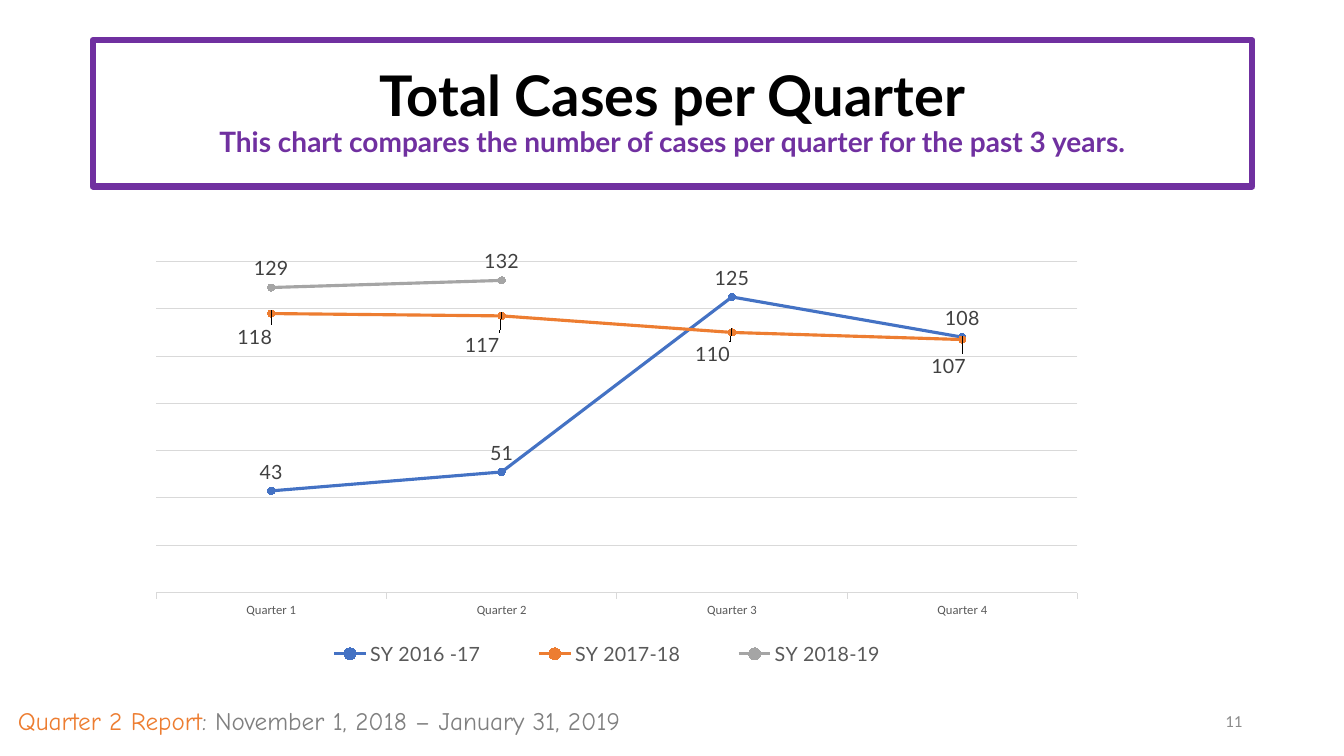
from lxml import etree
from pptx import Presentation
from pptx.chart.data import CategoryChartData
from pptx.dml.color import RGBColor
from pptx.enum.chart import XL_CHART_TYPE as ChartType
from pptx.enum.chart import XL_LABEL_POSITION as LabelPosition
from pptx.enum.chart import XL_LEGEND_POSITION as LegendPosition
from pptx.enum.chart import XL_MARKER_STYLE as MarkerStyle
from pptx.enum.chart import XL_TICK_LABEL_POSITION as TickLabels
from pptx.enum.chart import XL_TICK_MARK as TickMark
from pptx.enum.shapes import MSO_SHAPE as Preset
from pptx.enum.text import MSO_ANCHOR as Anchor
from pptx.enum.text import PP_ALIGN as Align
from pptx.oxml.ns import qn
from pptx.util import Pt

PX = 9144  # 100 px to the inch
PURPLE, ORANGE, GREY, GRID = "7030A0", "ED7D31", "595959", "D9D9D9"


def style(font, text=None, *, size, color, name="Lato", bold=False):
    """Format a font; given text, add it to the paragraph passed as font."""
    if text is not None:
        run = font.add_run()
        run.text = text
        font = run.font
    font.size, font.name, font.bold = Pt(size), name, bold
    font.color.rgb = RGBColor.from_string(color)


def set_layout(parent, position, **fractions):
    """Place a chart part by fractions of the chart area."""
    for old in parent.findall(qn("c:layout")):
        parent.remove(old)
    layout = etree.Element(qn("c:layout"))
    manual = etree.SubElement(layout, qn("c:manualLayout"))
    for key, value in fractions.items():
        etree.SubElement(manual, qn(f"c:{key}")).set("val", str(value))
    parent.insert(position, layout)


presentation = Presentation()
presentation.slide_width, presentation.slide_height = 1333 * PX, 750 * PX
slide = presentation.slides.add_slide(presentation.slide_layouts[6])

# Footer and slide number
footer = slide.shapes.add_textbox(8 * PX, 695 * PX, 687 * PX, 40 * PX)
footer.text_frame.word_wrap = True
paragraph = footer.text_frame.paragraphs[0]
style(paragraph, "Quarter 2 Report", size=18, color=ORANGE, name="Comic Neue")
style(paragraph, ": November 1, 2018 – January 31, 2019", size=18,
      color="808080", name="Comic Neue")

number = slide.shapes.add_textbox(942 * PX, 695 * PX, 300 * PX, 40 * PX)
number.text_frame.word_wrap = True
number.text_frame.vertical_anchor = Anchor.MIDDLE
paragraph = number.text_frame.paragraphs[0]
paragraph.alignment = Align.RIGHT
style(paragraph, "11", size=12, color="8C8C8C", name="Calibri")

# Line chart
chart_data = CategoryChartData()
chart_data.categories = [f"Quarter {quarter}" for quarter in range(1, 5)]
school_years = [
    ("SY 2016 -17", (43, 51, 125, 108), "4472C4"),
    ("SY 2017-18", (118, 117, 110, 107), ORANGE),
    ("SY 2018-19", (129, 132, None, None), "A5A5A5"),
]
for year, cases, _ in school_years:
    chart_data.add_series(year, cases)
chart = slide.shapes.add_chart(ChartType.LINE_MARKERS, 126 * PX, 246 * PX,
                               962 * PX, 450 * PX, chart_data).chart
chart.has_title = False
style(chart.font, size=10, color="000000", name="Calibri")
chart.plots[0].vary_by_categories = False
set_layout(chart.plots[0]._element.getparent(), 0, layoutTarget="inner",
           xMode="edge", yMode="edge", x=0.03, y=0.03, w=0.95, h=0.73)

# Axes
category_axis, value_axis = chart.category_axis, chart.value_axis
category_axis.major_tick_mark = TickMark.OUTSIDE
category_axis.tick_label_position = TickLabels.LOW
style(category_axis.tick_labels.font, size=9, color=GREY, name="Calibri")
value_axis.visible = False
value_axis.minimum_scale, value_axis.maximum_scale = 0, 140
value_axis.major_unit = 20
for line in (category_axis.format.line, value_axis.major_gridlines.format.line):
    line.color.rgb = RGBColor.from_string(GRID)
    line.width = Pt(0.75)

# Series with value labels
for series, (_, _, color) in zip(chart.plots[0].series, school_years):
    rgb = RGBColor.from_string(color)
    series.smooth = False
    series.format.line.color.rgb = rgb
    series.format.line.width = Pt(2.25)
    series.marker.style, series.marker.size = MarkerStyle.CIRCLE, 5
    series.marker.format.fill.solid()
    series.marker.format.fill.fore_color.rgb = rgb
    series.marker.format.line.color.rgb = rgb
    labels = series.data_labels
    labels.show_value, labels.position = True, LabelPosition.ABOVE
    style(labels.font, size=14, color="404040")

# Labels of the middle year sit below its line
middle_year = chart.plots[0].series[1]
label_shifts = [(-0.017, 0.095), (-0.02, 0.106), (-0.02, 0.09), (-0.014, 0.1)]
for index in range(len(label_shifts)):
    label = middle_year.points[index].data_label
    style(label.font, size=14, color="404040")
    label.position = LabelPosition.ABOVE
label_elements = middle_year.data_labels._element.findall(qn("c:dLbl"))
for element, (shift_x, shift_y) in zip(label_elements, label_shifts):
    set_layout(element, 1, x=shift_x, y=shift_y)

# Legend
chart.has_legend = True
legend = chart.legend
legend.position, legend.include_in_layout = LegendPosition.RIGHT, False
style(legend.font, size=14, color=GREY)
set_layout(legend._element, 1, xMode="edge", yMode="edge",
           x=0.16, y=0.85, w=0.67, h=0.09)

# Title box
title = slide.shapes.add_shape(Preset.RECTANGLE, 92 * PX, 40 * PX,
                               1150 * PX, 145 * PX)
title.shadow.inherit = False
title.fill.background()
title.line.color.rgb = RGBColor.from_string(PURPLE)
title.line.width = Pt(4.5)
title.text_frame.word_wrap = True
title.text_frame.vertical_anchor = Anchor.MIDDLE
paragraph = title.text_frame.paragraphs[0]
paragraph.alignment, paragraph.line_spacing = Align.CENTER, 0.9
style(paragraph, "Total Cases per Quarter", size=40, color="000000", bold=True)
paragraph.add_line_break()
style(paragraph, "This chart compares the number of cases per quarter "
      "for the past 3 years.", size=20, color=PURPLE, bold=True)

presentation.save("out.pptx")
